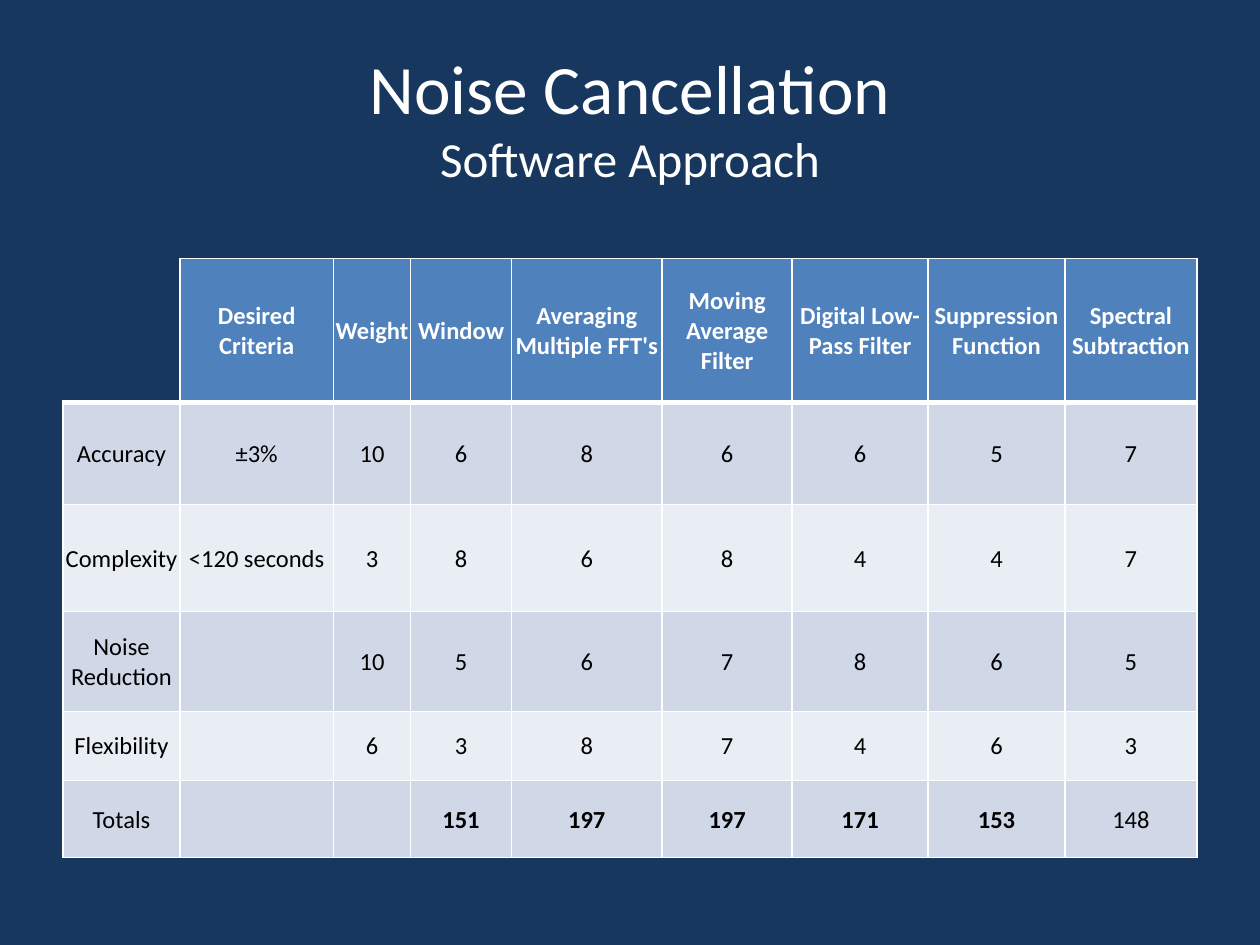
from lxml import etree
from pptx import Presentation
from pptx.dml.color import RGBColor
from pptx.enum.text import MSO_ANCHOR, MSO_AUTO_SIZE, PP_ALIGN
from pptx.oxml.ns import qn
from pptx.util import Cm, Pt

CENTER = PP_ALIGN.CENTER
MIDDLE = MSO_ANCHOR.MIDDLE
NO_AUTOFIT = MSO_AUTO_SIZE.NONE
TITLE_ONLY = 5

COLUMN_WIDTHS = [2.36, 3.09, 1.56, 2.03, 3.04, 2.62, 2.74, 2.76, 2.66]
ROW_HEIGHTS = [2.9, 2.06, 2.16, 2.01, 1.4, 1.55]
CRITERIA_ROWS = [
    ["", "Desired Criteria", "Weight", "Window", "Averaging Multiple FFT's",
     "Moving Average Filter", "Digital Low-Pass Filter",
     "Suppression Function", "Spectral Subtraction"],
    ["Accuracy", "±3%", "10", "6", "8", "6", "6", "5", "7"],
    ["Complexity", "<120 seconds", "3", "8", "6", "8", "4", "4", "7"],
    ["Noise Reduction", "", "10", "5", "6", "7", "8", "6", "5"],
    ["Flexibility", "", "6", "3", "8", "7", "4", "6", "3"],
    ["Totals", "", "", "151", "197", "197", "171", "153", "148"],
]
BOLD_TOTALS = range(3, 8)


def color(value):
    return RGBColor.from_string(value)


def apply(target, values):
    for name, value in values.items():
        setattr(target, name, value)


class SlideBuilder:
    font_name = "Calibri"
    background = "17375E"
    light = "FFFFFF"
    dark = "000000"
    header_fill = "4F81BD"
    band_fills = ["E9EDF4", "D0D8E8"]
    cell_format = {
        "margin_left": Cm(0.02), "margin_right": Cm(0.02),
        "margin_top": Cm(0.02), "margin_bottom": 0,
        "vertical_anchor": MIDDLE,
    }

    def __init__(self, presentation):
        self.slide = presentation.slides.add_slide(
            presentation.slide_layouts[TITLE_ONLY])
        fill = self.slide.background.fill
        fill.solid()
        fill.fore_color.rgb = color(self.background)

    def style_font(self, font, size, font_color, bold=False):
        apply(font, {"name": self.font_name, "size": Pt(size), "bold": bold})
        font.color.rgb = color(font_color)

    def add_title(self, box, lines):
        title = self.slide.shapes.title
        names = ["left", "top", "width", "height"]
        apply(title, dict(zip(names, map(Cm, box))))
        apply(title.text_frame, {"auto_size": NO_AUTOFIT, "word_wrap": True,
                                 "vertical_anchor": MIDDLE})
        paragraph = title.text_frame.paragraphs[0]
        paragraph.alignment = CENTER
        for index, (text, size) in enumerate(lines):
            if index:
                paragraph.add_line_break()
            run = paragraph.add_run()
            run.text = text
            self.style_font(run.font, size, self.light)

    def add_border(self, cell, side, width):
        properties = cell._tc.get_or_add_tcPr()
        line = etree.SubElement(properties, qn(f"a:ln{side}"), w=str(Pt(width)))
        if width:
            fill = etree.SubElement(line, qn("a:solidFill"))
            etree.SubElement(fill, qn("a:srgbClr"), val=self.light)
        else:
            etree.SubElement(line, qn("a:noFill"))

    def style_cell(self, cell, row, column, text):
        is_corner = row == column == 0
        apply(cell, self.cell_format)
        widths = {"L": 0 if is_corner else 1, "R": 1,
                  "T": 0 if is_corner else 3 if row == 1 else 1,
                  "B": 3 if row == 0 else 1}
        for side, width in widths.items():
            self.add_border(cell, side, width)
        if is_corner:
            cell.fill.background()
        else:
            cell.fill.solid()
            cell.fill.fore_color.rgb = color(
                self.band_fills[row % 2] if row else self.header_fill)
        paragraph = cell.text_frame.paragraphs[0]
        paragraph.alignment = CENTER
        is_total = row == len(CRITERIA_ROWS) - 1 and column in BOLD_TOTALS
        style = (14, self.dark if row else self.light, row == 0 or is_total)
        if text:
            run = paragraph.add_run()
            run.text = text
            self.style_font(run.font, *style)

    def add_table(self, left, top, widths, heights, rows):
        table = self.slide.shapes.add_table(
            len(heights), len(widths), Cm(left), Cm(top),
            Cm(sum(widths)), Cm(sum(heights))).table
        for column, width in zip(table.columns, widths):
            column.width = Cm(width)
        for row, height in zip(table.rows, heights):
            row.height = Cm(height)
        for row, texts in enumerate(rows):
            for column, text in enumerate(texts):
                self.style_cell(table.cell(row, column), row, column, text)


def main():
    presentation = Presentation()
    presentation.slide_width = Cm(25.4)
    presentation.slide_height = Cm(19.05)
    builder = SlideBuilder(presentation)
    builder.add_title((1.27, 0.76, 22.86, 3.18),
                      [("Noise Cancellation", 39.6), ("Software Approach", 28)])
    builder.add_table(1.27, 5.21, COLUMN_WIDTHS, ROW_HEIGHTS, CRITERIA_ROWS)
    presentation.save("out.pptx")


if __name__ == "__main__":
    main()
